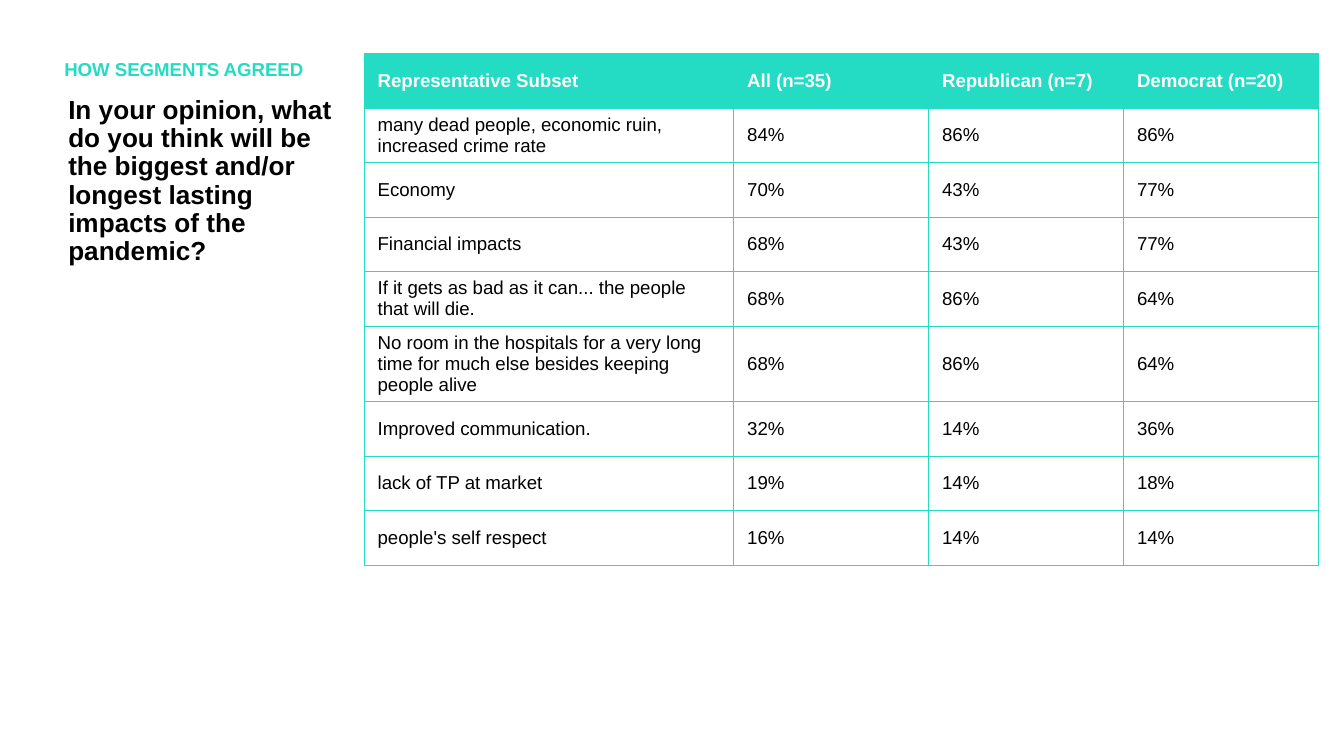
from typing import NamedTuple

from lxml import etree
from pptx import Presentation
from pptx.dml.color import RGBColor
from pptx.enum import text
from pptx.oxml.ns import qn
from pptx.util import Inches, Pt

TEAL, WHITE, BLACK = "24DBC3", "FFFFFF", "000000"
WIDE = 10


class Row(NamedTuple):
    label: str
    total: int
    rep: int
    dem: int


class Note(NamedTuple):
    words: str
    box: tuple
    size: float
    color: str


HEADS = ("Representative Subset", "All (n=35)", "Republican (n=7)", "Democrat (n=20)")
WIDTHS = (2.75, 1.45, 1.45, 1.45)
ROWS = [
    Row("many dead people, economic ruin, increased crime rate", 84, 86, 86),
    Row("Economy", 70, 43, 77),
    Row("Financial impacts", 68, 43, 77),
    Row("If it gets as bad as it can... the people that will die.", 68, 86, 64),
    Row("No room in the hospitals for a very long time for much else "
        "besides keeping people alive", 68, 86, 64),
    Row("Improved communication.", 32, 14, 36),
    Row("lack of TP at market", 19, 14, 18),
    Row("people's self respect", 16, 14, 14),
]
NOTES = [
    Note("In your opinion, what do you think will be the biggest and/or "
         "longest lasting impacts of the pandemic?",
         (0.41, 0.67, 2.3, 4.41), 14, BLACK),
    Note("HOW SEGMENTS AGREED", (0.38, 0.4, 2.32, 0.28), 10, TEAL),
]


def rgb(code: str) -> RGBColor:
    return RGBColor.from_string(code)


def write(frame, words: str, *, size: float = 10, color: str = BLACK,
          bold: bool = False, space: float = 1.0) -> None:
    frame.word_wrap = True
    par = frame.paragraphs[0]
    par.alignment = text.PP_ALIGN.LEFT
    par.line_spacing = space
    run = par.add_run()
    run.text = words
    font = run.font
    font.name, font.size, font.bold = "Arial", Pt(size), bold
    font.color.rgb = rgb(color)


def add_note(slide, note: Note) -> None:
    box = slide.shapes.add_textbox(*map(Inches, note.box))
    write(box.text_frame, note.words, size=note.size, color=note.color,
          bold=True, space=0.9)


def edge(cell, color: str, width: float) -> None:
    # Borders come before the fill in the cell properties
    props = cell._tc.get_or_add_tcPr()
    for spot, side in enumerate(("lnL", "lnR", "lnT", "lnB")):
        line = etree.Element(qn(f"a:{side}"), w=str(Pt(width)))
        fill = etree.SubElement(line, qn("a:solidFill"))
        etree.SubElement(fill, qn("a:srgbClr"), val=color)
        props.insert(spot, line)


def fill_cell(cell, words: str, head: bool) -> None:
    cell.fill.solid()
    cell.fill.fore_color.rgb = rgb(TEAL if head else WHITE)
    cell.vertical_anchor = text.MSO_ANCHOR.MIDDLE
    cell.margin_top = cell.margin_bottom = Inches(0.03)
    write(cell.text_frame, words, color=WHITE if head else BLACK, bold=head)
    edge(cell, TEAL, 0.75)


def add_grid(slide) -> None:
    lines = [HEADS] + [(r.label, *(f"{v}%" for v in r[1:])) for r in ROWS]
    table = slide.shapes.add_table(
        len(lines), len(HEADS), Inches(2.71), Inches(0.4),
        Inches(sum(WIDTHS)), Inches(3.65)).table
    for col, width in zip(table.columns, WIDTHS):
        col.width = Inches(width)
    for i, line in enumerate(lines):
        for j, words in enumerate(line):
            fill_cell(table.cell(i, j), words, head=i == 0)


def main() -> None:
    # Widescreen 16:9 page
    deck = Presentation()
    deck.slide_width, deck.slide_height = Inches(WIDE), Inches(WIDE * 9 / 16)
    slide = deck.slides.add_slide(deck.slide_layouts[6])

    # Question and section label
    for note in NOTES:
        add_note(slide, note)

    # Agreement by segment
    add_grid(slide)
    deck.save("out.pptx")


if __name__ == "__main__":
    main()
